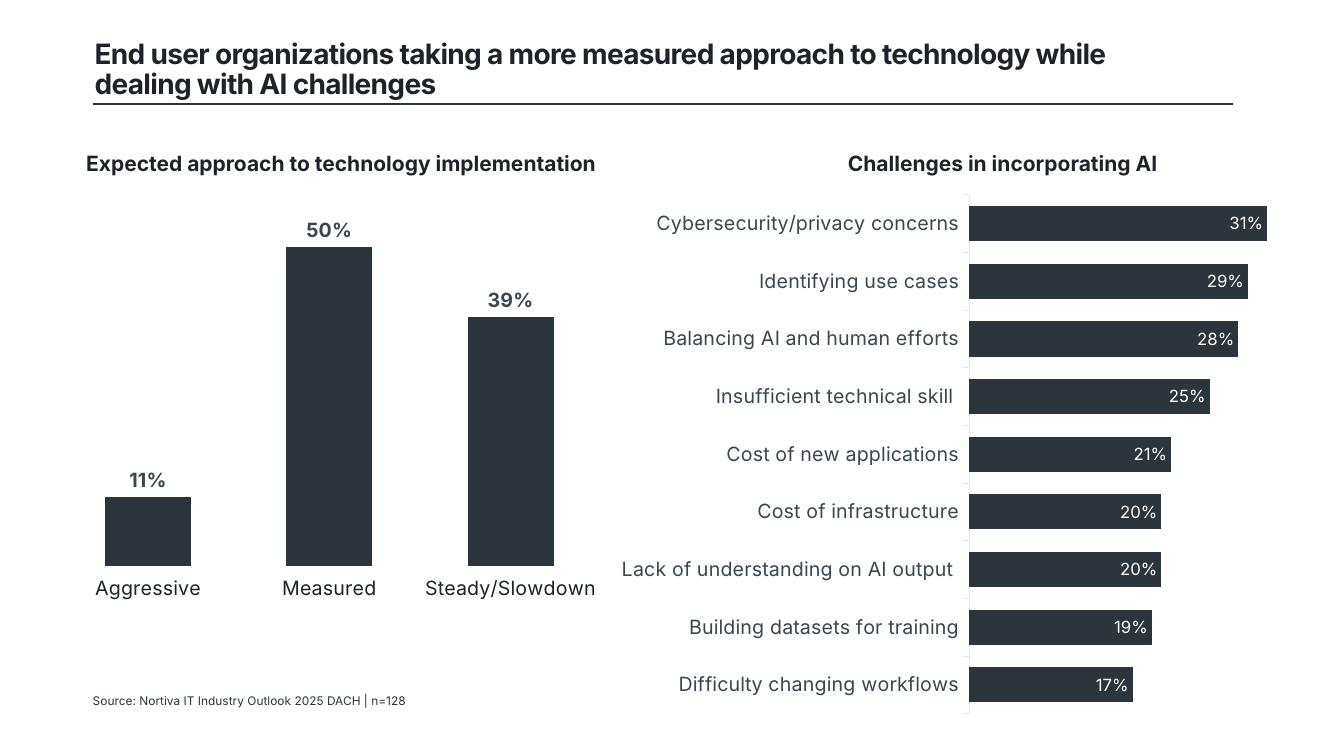
from lxml import etree
from pptx import Presentation
from pptx.chart.data import CategoryChartData
from pptx.dml.color import RGBColor
from pptx.enum.chart import XL_CHART_TYPE, XL_LABEL_POSITION, XL_TICK_MARK
from pptx.enum.text import MSO_ANCHOR, PP_ALIGN
from pptx.oxml import parse_xml
from pptx.oxml.ns import nsdecls, qn
from pptx.util import Inches, Pt

COLORS = {
    "ink": "1D2328",
    "bar": "2C353C",
    "label": "3A4650",
    "chart": "586169",
    "axis": "E5E7E9",
    "white": "FFFFFF",
}
FONT = "Inter"

APPROACHES = [("Aggressive", 0.11), ("Measured", 0.5), ("Steady/Slowdown", 0.39)]
CHALLENGES = [
    ("Difficulty changing workflows", 0.17),
    ("Building datasets for training", 0.19),
    ("Lack of understanding on AI output ", 0.2),
    ("Cost of infrastructure", 0.2),
    ("Cost of new applications", 0.21),
    ("Insufficient technical skill ", 0.25),
    ("Balancing AI and human efforts", 0.28),
    ("Identifying use cases", 0.29),
    ("Cybersecurity/privacy concerns", 0.31),
]


def color(name):
    return RGBColor.from_string(COLORS[name])


def style_font(font, size, color_name, bold=False, name=FONT):
    font.name = name
    font.size = Pt(size)
    font.bold = bold
    font.color.rgb = color(color_name)


def add_text(page, box, text, size, color_name, bold=False, align=PP_ALIGN.LEFT,
             anchor=MSO_ANCHOR.TOP, inset=None):
    frame = page.shapes.add_textbox(*map(Inches, box)).text_frame
    frame.word_wrap = True
    frame.vertical_anchor = anchor
    if inset is not None:
        frame.margin_left = frame.margin_right = Inches(inset)
        frame.margin_top = frame.margin_bottom = Inches(inset)
    para = frame.paragraphs[0]
    para.alignment = align
    span = para.add_run()
    span.text = text
    style_font(span.font, size, color_name, bold)
    return para, span


def add_header(page, box):
    left, top, width, height = box
    para, span = add_text(
        page, box,
        "End user organizations taking a more measured approach to technology "
        "while dealing with AI challenges",
        20, "ink", bold=True, anchor=MSO_ANCHOR.MIDDLE)
    para.line_spacing = 0.9
    span._r.get_or_add_rPr().set("spc", "-50")
    rule_left, rule_top = left + 0.08, top + height - 0.02
    rule = page.shapes.add_connector(
        1, Inches(rule_left), Inches(rule_top),
        Inches(rule_left + 11.31), Inches(rule_top))
    rule.line.color.rgb = color("bar")
    rule.line.width = Pt(1)
    etree.SubElement(rule._element.spPr, qn("a:effectLst"))


def set_plot_layout(chart, plot_box):
    plot_area = chart._chartSpace.chart.plotArea
    for layout in plot_area.findall(qn("c:layout")):
        plot_area.remove(layout)
    sizes = "".join(f'<c:{tag} val="{value}"/>' for tag, value in zip("xywh", plot_box))
    plot_area.insert(0, parse_xml(
        f'<c:layout {nsdecls("c")}><c:manualLayout><c:layoutTarget val="inner"/>'
        f'<c:xMode val="edge"/><c:yMode val="edge"/>{sizes}'
        '</c:manualLayout></c:layout>'))


def add_bars(page, box, kind, rows, plot_box, maximum, gap, base_size, category_color):
    data = CategoryChartData(number_format="0%")
    data.categories = [name for name, share in rows]
    data.add_series("Series 1", [share for name, share in rows])
    chart = page.shapes.add_chart(kind, *map(Inches, box), data).chart
    chart.has_title = False
    chart.has_legend = False
    style_font(chart.font, base_size, "chart", name="Roboto")

    values = chart.value_axis
    values.minimum_scale = 0
    values.maximum_scale = maximum
    values.has_major_gridlines = False
    values.visible = False
    categories = chart.category_axis
    categories.has_major_gridlines = False
    categories.major_tick_mark = XL_TICK_MARK.OUTSIDE
    style_font(categories.tick_labels.font, 14, category_color)

    plot = chart.plots[0]
    plot.gap_width = gap
    plot.vary_by_categories = False
    series = plot.series[0]
    series.invert_if_negative = False
    series.format.fill.solid()
    series.format.fill.fore_color.rgb = color("bar")
    set_plot_layout(chart, plot_box)
    return chart


def label_bars(chart, position, size, color_name, bold=False):
    labels = chart.plots[0].series[0].data_labels
    labels.show_value = True
    labels.number_format = "0%"
    labels.number_format_is_linked = False
    labels.position = position
    style_font(labels.font, size, color_name, bold)


def add_panel_heading(page, left, top, text):
    add_text(page, (left, top, 5.51, 0.35), text, 15, "ink", bold=True,
             align=PP_ALIGN.CENTER)


def add_approach_panel(page, box):
    left, top, width, height = box
    add_panel_heading(page, left + 0.06, top, "Expected approach to technology implementation")
    chart = add_bars(
        page, (left, top + 0.58, width, height - 0.58), XL_CHART_TYPE.COLUMN_CLUSTERED,
        APPROACHES, (0, 0.038, 0.999, 0.761), 0.54, 108, 18, "ink")
    chart.category_axis.format.line.fill.background()
    outline = chart.plots[0].series[0].format.line
    outline.color.rgb = color("white")
    outline.width = Pt(0.75)
    label_bars(chart, XL_LABEL_POSITION.OUTSIDE_END, 14, "label", bold=True)


def add_challenge_panel(page, box):
    left, top, width, height = box
    chart = add_bars(
        page, (left, top + 0.36, width, height - 0.36), XL_CHART_TYPE.BAR_CLUSTERED,
        CHALLENGES, (0.535, 0.025, 0.409, 0.964), 0.33, 64, 10, "label")
    chart.plots[0].overlap = -7
    axis_line = chart.category_axis.format.line
    axis_line.color.rgb = color("axis")
    axis_line.width = Pt(0.75)
    label_bars(chart, XL_LABEL_POSITION.INSIDE_END, 12, "white")
    add_panel_heading(page, left + 1.69, top, "Challenges in incorporating AI")


def add_source(page, box):
    add_text(page, box, "Source: Nortiva IT Industry Outlook 2025 DACH | n=128",
             8.5, "bar", anchor=MSO_ANCHOR.MIDDLE, inset=0)


def main():
    deck = Presentation()
    deck.slide_width = Inches(13.33)
    deck.slide_height = Inches(7.5)
    page = deck.slides.add_slide(deck.slide_layouts[6])
    add_header(page, (0.84, 0.35, 11.18, 0.7))
    add_approach_panel(page, (0.57, 1.44, 5.4, 5.09))
    add_source(page, (0.92, 6.85, 7, 0.2))
    add_challenge_panel(page, (5.5, 1.44, 7.69, 5.7))
    deck.save("out.pptx")


if __name__ == "__main__":
    main()
